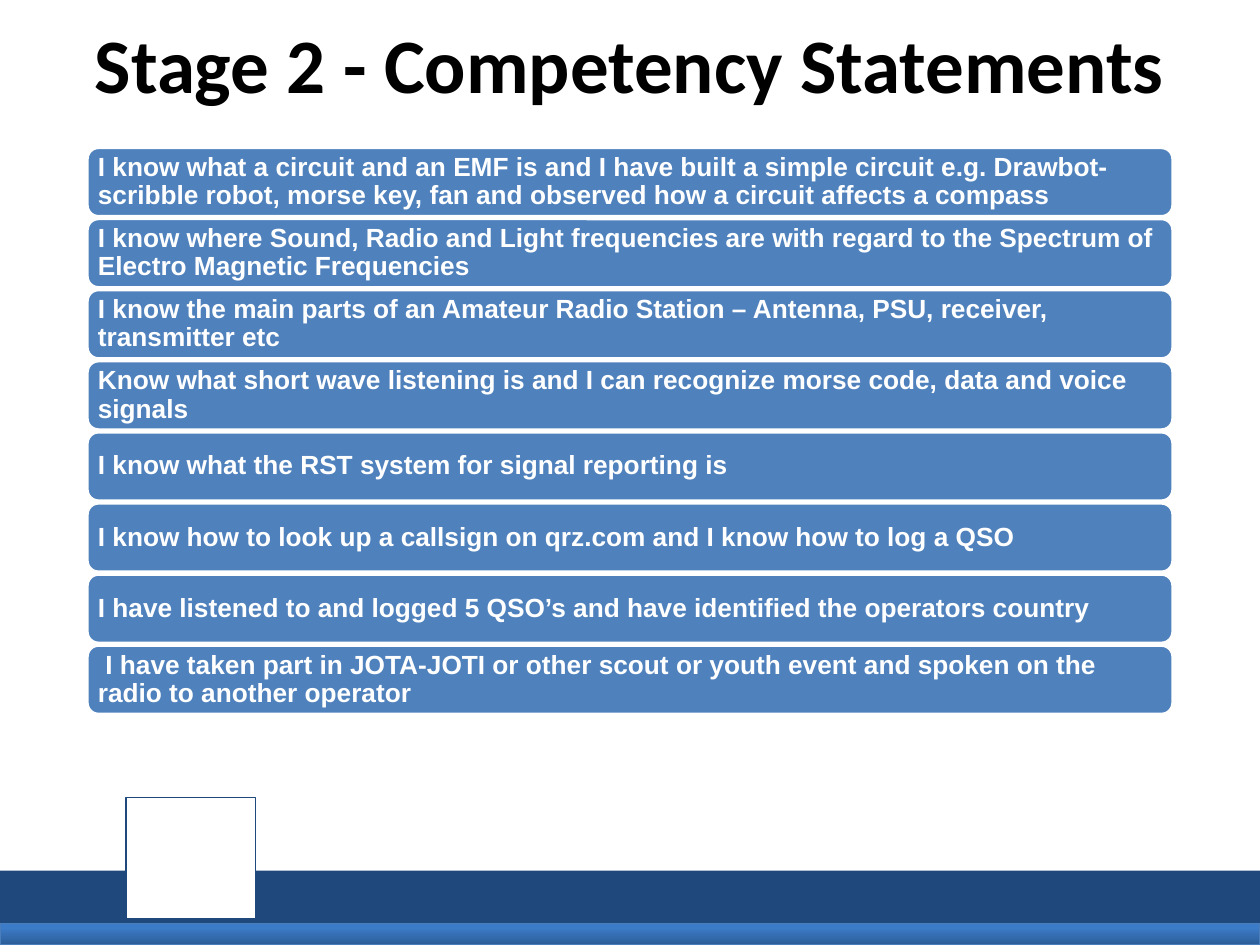
from pptx import Presentation
from pptx.dml.color import RGBColor
from pptx.enum.shapes import MSO_SHAPE
from pptx.enum.text import MSO_ANCHOR, PP_ALIGN
from pptx.util import Inches, Pt

COLORS = {"navy": "1F497D", "bar": "4F81BD", "white": "FFFFFF", "black": "000000",
          "strip_top": "3C7BC7", "strip_bottom": "2C5D98", "strip_line": "4A7EBB"}
STATEMENTS = [
    "I know what a circuit and an EMF is and I have built a simple circuit e.g. Drawbot-scribble robot, morse key, fan and observed how a circuit affects a compass",
    "I know where Sound, Radio and Light frequencies are with regard to the Spectrum of Electro Magnetic Frequencies",
    "I know the main parts of an Amateur Radio Station – Antenna, PSU, receiver, transmitter etc",
    "Know what short wave listening is and I can recognize morse code, data and voice signals",
    "I know what the RST system for signal reporting is",
    "I know how to look up a callsign on qrz.com and I know how to log a QSO",
    "I have listened to and logged 5 QSO’s and have identified the operators country",
    "I have taken part in JOTA-JOTI or other scout or youth event and spoken on the radio to another operator",
]


def add_box(kind, x, y, w, h, fill, line=None, weight=0.75):
    sp = slide.shapes.add_shape(kind, Inches(x), Inches(y), Inches(w), Inches(h))
    sp.shadow.inherit = False
    sp.fill.solid()
    sp.fill.fore_color.rgb = RGBColor.from_string(COLORS[fill])
    if line:
        sp.line.color.rgb = RGBColor.from_string(COLORS[line])
        sp.line.width = Pt(weight)
    else:
        sp.line.fill.background()
    return sp


def set_text(sp, text, size, font, color, align=PP_ALIGN.LEFT, inset=(0.06, 0.06), spacing=1.0):
    tf = sp.text_frame
    tf.word_wrap = True
    tf.vertical_anchor = MSO_ANCHOR.MIDDLE
    tf.margin_left = tf.margin_right = Inches(inset[0])
    tf.margin_top = tf.margin_bottom = Inches(inset[1])
    p = tf.paragraphs[0]
    p.alignment, p.line_spacing = align, spacing
    r = p.add_run()
    r.text = text
    r.font.size, r.font.name, r.font.bold = Pt(size), font, True
    r.font.color.rgb = RGBColor.from_string(COLORS[color])
    return p


prs = Presentation()
W, H = 10, 7.5
prs.slide_width, prs.slide_height = Inches(W), Inches(H)
slide = prs.slides.add_slide(prs.slide_layouts[5])

# Footer: navy band, gradient strip and emblem panel
STRIP_H, BAND_H = 0.17, 0.42
add_box(MSO_SHAPE.RECTANGLE, 0, H - STRIP_H - BAND_H, W, BAND_H, "navy")
strip = add_box(MSO_SHAPE.RECTANGLE, 0, H - STRIP_H, W, STRIP_H, "strip_top", "strip_line")
strip.fill.gradient()
strip.fill.gradient_angle = 270
for stop, position, name in zip(strip.fill.gradient_stops, (0.2, 1), ("strip_top", "strip_bottom")):
    stop.position = position
    stop.color.rgb = RGBColor.from_string(COLORS[name])
add_box(MSO_SHAPE.RECTANGLE, W / 10, 6.33, 1.03, 0.96, "white", "navy")

title = slide.shapes.title
title.left, title.top, title.width, title.height = 0, 0, Inches(W), Inches(1)
set_text(title, "Stage 2 - Competency Statements", 44, "Calibri", "black",
         align=PP_ALIGN.CENTER, inset=(0.1, 0.05))

# One rounded bar per statement, in equal rows
LEFT, TOP, BAR_H, PITCH = 0.69, 1.17, 0.55, 3.95 / 7
for row, statement in enumerate(STATEMENTS):
    bar = add_box(MSO_SHAPE.ROUNDED_RECTANGLE, LEFT, TOP + row * PITCH, W - 2 * LEFT, BAR_H,
                  "bar", "white", 2)
    p = set_text(bar, statement, 15, "Arial", "white", spacing=0.9)
# The last statement starts slightly indented
p._p.get_or_add_pPr().set("indent", str(Inches(0.06)))

prs.save("out.pptx")
